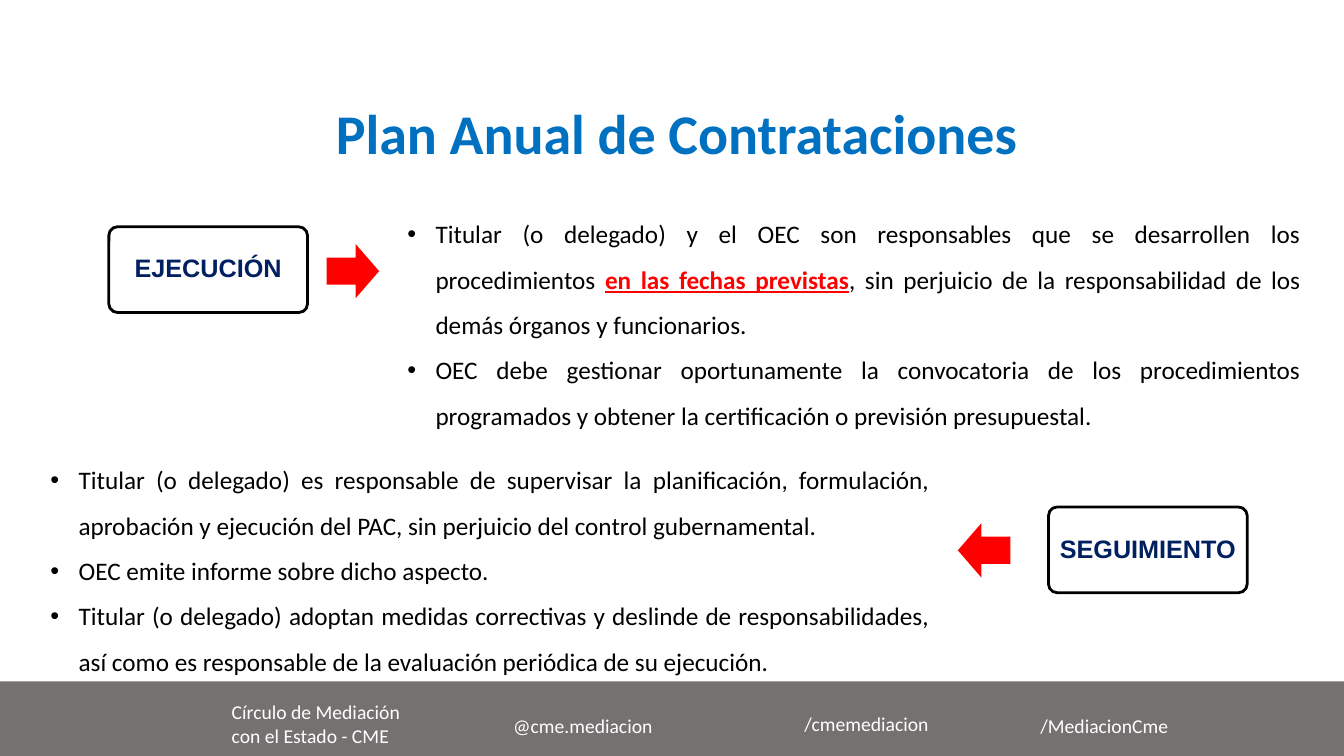
from dataclasses import dataclass

from lxml import etree
from pptx import Presentation
from pptx.dml.color import RGBColor
from pptx.enum.shapes import MSO_SHAPE as Shape
from pptx.enum.text import MSO_ANCHOR as Anchor, PP_ALIGN as Align
from pptx.oxml.ns import qn
from pptx.util import Inches, Pt


@dataclass(frozen=True)
class Theme:
    title: str = "0070C0"
    label: str = "002060"
    accent: str = "FF0000"
    footer: str = "767171"
    black: str = "000000"
    white: str = "FFFFFF"
    body_font: str = "Calibri"
    label_font: str = "Arial"
    title_size: int = 40
    body_size: int = 18
    footer_size: int = 14


theme = Theme()


def write_text(shape, paragraphs, size=theme.body_size, color=theme.black,
               font=theme.body_font, bold=False, align=Align.LEFT, spacing=1.0,
               anchor=Anchor.TOP, inset=0.1, bullet=False):
    frame = shape.text_frame
    frame.word_wrap = True
    frame.vertical_anchor = anchor
    frame.margin_left = frame.margin_right = Inches(inset)
    frame.margin_top = frame.margin_bottom = Inches(min(inset, 0.09))
    for index, pieces in enumerate(paragraphs):
        paragraph = frame.paragraphs[0] if index == 0 else frame.add_paragraph()
        paragraph.alignment = align
        paragraph.line_spacing = spacing
        paragraph.space_before = paragraph.space_after = Pt(0)
        if bullet:
            properties = paragraph._p.get_or_add_pPr()
            properties.set("marL", str(Inches(0.28)))
            properties.set("indent", str(Inches(-0.28)))
            etree.SubElement(properties, qn("a:buFont")).set("typeface", "Arial")
            etree.SubElement(properties, qn("a:buChar")).set("char", "•")
        for position, piece in enumerate(pieces):
            emphasis = position == 1
            run = paragraph.add_run()
            run.text = piece
            run.font.name = font
            run.font.size = Pt(size)
            run.font.bold = bold or emphasis
            run.font.underline = emphasis
            run.font.color.rgb = RGBColor.from_string(theme.accent if emphasis else color)


def add_filled(kind, left, top, width, height, fill):
    shape = slide.shapes.add_shape(kind, Inches(left), Inches(top), Inches(width), Inches(height))
    shape.shadow.inherit = False
    shape.fill.solid()
    shape.fill.fore_color.rgb = RGBColor.from_string(fill)
    shape.line.fill.background()
    return shape


presentation = Presentation()
presentation.slide_width = Inches(13.33)
presentation.slide_height = Inches(7.5)
slide = presentation.slides.add_slide(presentation.slide_layouts[5])

title = slide.shapes.title
title.left, title.top = Inches(2.57), Inches(0.99)
title.width, title.height = Inches(8.28), Inches(0.73)
write_text(title, [["Plan Anual de Contrataciones"]], size=theme.title_size, color=theme.title,
           bold=True, align=Align.CENTER, spacing=0.9, anchor=Anchor.MIDDLE)

add_filled(Shape.RECTANGLE, 0, 6.76, 13.33, 0.74, theme.footer)
contacts = [
    ("Círculo de Mediación con el Estado - CME", 2.2, 6.93, 1.95),
    ("@cme.mediacion", 4.99, 6.95, 1.95),
    ("/cmemediacion", 7.88, 6.93, 1.95),
    ("/MediacionCme", 10.22, 6.95, 1.95),
]
for contact, left, top, width in contacts:
    box = slide.shapes.add_textbox(Inches(left), Inches(top), Inches(width), Inches(0.5))
    write_text(box, [[contact]], size=theme.footer_size, color=theme.white, anchor=Anchor.MIDDLE)

stages = [
    ("EJECUCIÓN", 1.08, 2.25, Shape.RIGHT_ARROW, 3.24, 2.42),
    ("SEGUIMIENTO", 10.4, 5.03, Shape.LEFT_ARROW, 9.5, 5.19),
]
for name, left, top, arrow_kind, arrow_left, arrow_top in stages:
    stage = add_filled(Shape.ROUNDED_RECTANGLE, left, top, 1.97, 0.85, theme.white)
    stage.adjustments[0] = 0.1
    stage.line.color.rgb = RGBColor.from_string(theme.black)
    stage.line.width = Pt(2)
    write_text(stage, [[name]], color=theme.label, font=theme.label_font, bold=True,
               align=Align.CENTER, spacing=0.9, anchor=Anchor.MIDDLE, inset=0.06)
    arrow = add_filled(arrow_kind, arrow_left, arrow_top, 0.52, 0.54, theme.accent)
    arrow.adjustments[0] = 0.5
    arrow.adjustments[1] = 0.45

duties = [
    (0.41, 4.37, 8.9, 1.78, [
        ["Titular (o delegado) es responsable de supervisar la planificación, formulación, "
         "aprobación y ejecución del PAC, sin perjuicio del control gubernamental."],
        ["OEC emite informe sobre dicho aspecto."],
        ["Titular (o delegado) adoptan medidas correctivas y deslinde de responsabilidades, "
         "así como es responsable de la evaluación periódica de su ejecución."],
    ]),
    (3.95, 1.93, 9.04, 1.74, [
        ["Titular (o delegado) y el OEC son responsables que se desarrollen los procedimientos ",
         "en las fechas previstas",
         ", sin perjuicio de la responsabilidad de los demás órganos y funcionarios."],
        ["OEC debe gestionar oportunamente la convocatoria de los procedimientos programados "
         "y obtener la certificación o previsión presupuestal."],
    ]),
]
for left, top, width, height, paragraphs in duties:
    box = slide.shapes.add_textbox(Inches(left), Inches(top), Inches(width), Inches(height))
    write_text(box, paragraphs, align=Align.JUSTIFY, spacing=1.5, inset=0.09, bullet=True)

presentation.save("out.pptx")
